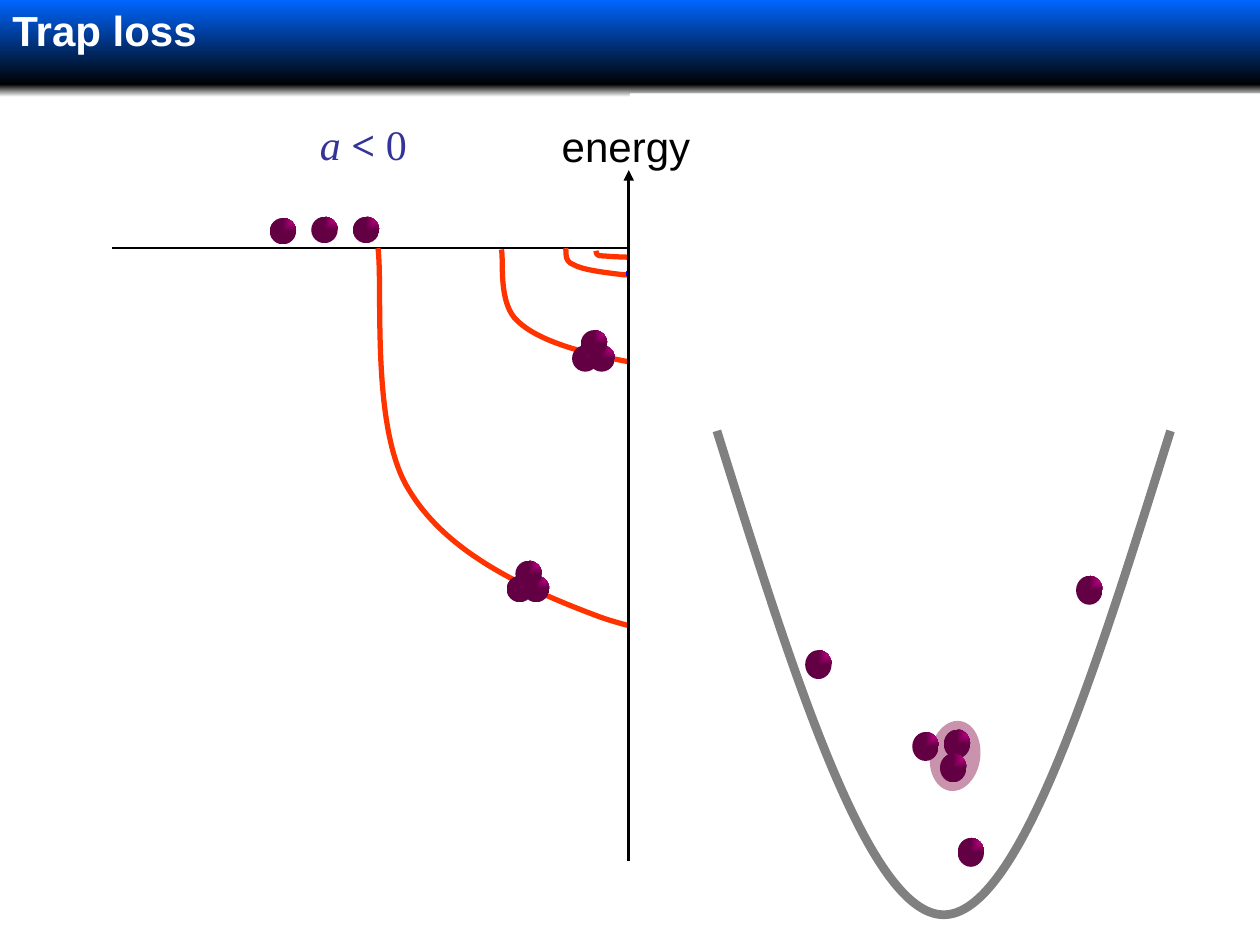
from lxml.etree import SubElement
from pptx import Presentation
from pptx.dml.color import RGBColor
from pptx.enum.shapes import MSO_CONNECTOR, MSO_SHAPE
from pptx.enum.text import MSO_ANCHOR
from pptx.oxml.ns import qn
from pptx.util import Inches, Pt

BLACK = RGBColor(0, 0, 0)
WHITE = RGBColor(255, 255, 255)
BLUE = RGBColor(0, 0x66, 255)
DEEP = RGBColor(0, 0, 255)
NAVY = RGBColor(0x33, 0x33, 0x99)
RED = RGBColor(255, 0x33, 0)
GRAY = RGBColor(0x80, 0x80, 0x80)
PINK = RGBColor(0xD6, 0, 0x93)
PLUM = RGBColor(0x63, 0, 0x44)
HALO = RGBColor(0x99, 0x33, 0x66)

BANDS = [(0, 0.68, BLUE, BLACK), (0.67, 0.1, BLACK, WHITE)]
FREE = [(2.14, 1.73), (2.47, 1.72), (2.8, 1.72)]
TRIMERS = [(4.54, 2.62), (4.02, 4.45)]
TRIO = [(0, 0.12), (0.13, 0.12), (0.07, 0)]
TRAPPED = [(8.54, 4.57), (7.6, 6.65), (6.39, 5.16)]
PAIR = [(7.49, 5.79), (7.46, 5.98)]
THIRD = (7.24, 5.81)

FIRST = [(3, 1.97), (3.04, 2.29), (2.94, 3.39), (3.24, 3.88),
         (3.53, 4.37), (4.12, 4.66), (4.77, 4.9),
         (5.43, 5.13), (6.6, 5.16), (7.16, 5.28),
         (7.72, 5.4), (7.88, 5.49), (8.12, 5.6),
         (8.37, 5.7), (8.52, 5.82), (8.64, 5.92),
         (8.75, 6.02), (8.79, 6.15), (8.83, 6.21)]
SECOND = [(3.98, 1.98), (4, 2.07), (3.95, 2.41), (4.11, 2.55),
          (4.27, 2.7), (4.58, 2.79), (4.93, 2.86),
          (5.28, 2.93), (5.91, 2.94), (6.2, 2.98),
          (6.5, 3.01), (6.59, 3.04), (6.72, 3.08),
          (6.85, 3.11), (6.93, 3.14), (6.99, 3.17),
          (7.05, 3.2), (7.07, 3.24), (7.09, 3.26)]
THIRDS = [(4.49, 1.97), (4.5, 1.99), (4.47, 2.07), (4.55, 2.1),
          (4.62, 2.14), (4.77, 2.16), (4.94, 2.18),
          (5.1, 2.19), (5.41, 2.2), (5.55, 2.2),
          (5.69, 2.21), (5.73, 2.22), (5.79, 2.23),
          (5.85, 2.23), (5.89, 2.24), (5.92, 2.25),
          (5.95, 2.26), (5.96, 2.27), (5.97, 2.27)]
FOURTH = [(4.73, 1.99), (4.74, 2), (4.72, 2.02), (4.76, 2.03),
          (4.8, 2.03), (4.87, 2.04), (4.96, 2.04),
          (5.04, 2.05), (5.19, 2.05), (5.26, 2.05),
          (5.33, 2.05), (5.35, 2.05), (5.38, 2.06),
          (5.41, 2.06), (5.43, 2.06), (5.45, 2.06),
          (5.46, 2.06), (5.47, 2.07), (5.47, 2.07)]
DIMER = [(4.97, 2.17), (6.37, 2.17), (7.76, 3.83), (9.16, 7.14)]
TRAP = [(9.29, 3.42), (8.69, 5.34), (8.09, 7.26), (7.49, 7.26),
        (6.89, 7.26), (6.29, 5.34), (5.69, 3.42)]

deck = Presentation()
deck.slide_width, deck.slide_height = Inches(10), Inches(7.5)
slide = deck.slides.add_slide(deck.slide_layouts[6])
shapes = slide.shapes


def add_form(kind, left, top, width, height, home=shapes):
    form = home.add_shape(kind, Inches(left), Inches(top), Inches(width), Inches(height))
    form.shadow.inherit = False
    form.line.fill.background()
    return form


def paint(form, color):
    form.fill.solid()
    form.fill.fore_color.rgb = color


def blend(form, *colors):
    form.fill.gradient()
    form.fill.gradient_angle = 270
    for stop, color in zip(form.fill.gradient_stops, colors):
        stop.color.rgb = color


def add_ball(left, top, height=0.21, home=shapes):
    ball = add_form(MSO_SHAPE.OVAL, left, top, 0.21, height, home)
    blend(ball, PINK, PLUM)
    fill = ball.element.spPr.find(qn("a:gradFill"))
    fill.remove(fill.find(qn("a:lin")))
    focus = SubElement(fill, qn("a:path"), {"path": "rect"})
    SubElement(focus, qn("a:fillToRect"), l="100000", b="100000")


def add_trimer(left, top):
    group = shapes.add_group_shape()
    for right, down in TRIO:
        add_ball(left + right, top + down, home=group.shapes)


def add_curve(points, color, width):
    start, *rest = [(Inches(x), Inches(y)) for x, y in points]
    pen = shapes.build_freeform(*start)
    pen.add_line_segments(rest, close=False)
    curve = pen.convert_to_shape()
    curve.shadow.inherit = False
    curve.fill.background()
    curve.line.color.rgb = color
    curve.line.width = Pt(width)
    route = next(curve.element.iter(qn("a:path")))
    steps = route.findall(qn("a:lnTo"))
    for i in range(0, len(steps), 3):
        bend = SubElement(route, qn("a:cubicBezTo"))
        for step in steps[i:i + 3]:
            bend.append(step[0])
            route.remove(step)


def add_axis(x1, y1, x2, y2, width):
    axis = shapes.add_connector(MSO_CONNECTOR.STRAIGHT, *map(Inches, (x1, y1, x2, y2)))
    axis.line.color.rgb = BLACK
    axis.line.width = Pt(width)
    SubElement(axis.line._get_or_add_ln(), qn("a:tailEnd"), type="triangle")
    SubElement(axis.element.spPr, qn("a:effectLst"))


def add_text(runs, left, top, width, height, font, color, wrap=False):
    box = shapes.add_textbox(Inches(left), Inches(top), Inches(width), Inches(height))
    box.text_frame.word_wrap = wrap
    para = box.text_frame.paragraphs[0]
    para.font.size, para.font.name = Pt(24), font
    para.font.color.rgb = color
    for text, bold, slant in runs:
        run = para.add_run()
        run.text = text
        run.font.bold, run.font.italic = bold, slant
    return box


for top, height, *colors in BANDS:
    blend(add_form(MSO_SHAPE.RECTANGLE, 0, top, 10, height), *colors)
title = add_text([("Trap loss", True, False)], 0, -0.39, 9, 1.25, "Arial", WHITE, True)
title.text_frame.vertical_anchor = MSO_ANCHOR.MIDDLE

add_axis(0.89, 1.97, 9.16, 1.97, 1)
add_text([("a ", False, True), ("< ", True, False), ("0", False, False)],
         2.44, 0.89, 0.89, 0.5, "Times New Roman", NAVY)
for points in (FIRST, SECOND, THIRDS, FOURTH):
    add_curve(points, RED, 3)
add_curve(DIMER, DEEP, 3)
for spot in TRIMERS:
    add_trimer(*spot)
for spot in FREE:
    add_ball(*spot)

paint(add_form(MSO_SHAPE.RECTANGLE, 5, 0.74, 5, 6.72), WHITE)
add_text([("energy", False, False)], 4.36, 0.91, 1.22, 0.5, "Arial", BLACK)
add_axis(4.99, 6.83, 4.99, 1.35, 1.5)

add_curve(TRAP, GRAY, 5)
for spot in TRAPPED:
    add_ball(*spot, 0.23)
bound = shapes.add_group_shape()
halo = add_form(MSO_SHAPE.OVAL, 7.38, 5.72, 0.4, 0.56, bound.shapes)
halo.rotation = 8.6
paint(halo, HALO)
tint = next(halo.element.spPr.iter(qn("a:srgbClr")))
SubElement(tint, qn("a:alpha"), val="53000")
for spot in PAIR:
    add_ball(*spot, 0.23, bound.shapes)
add_ball(*THIRD, 0.23)

deck.save("out.pptx")
